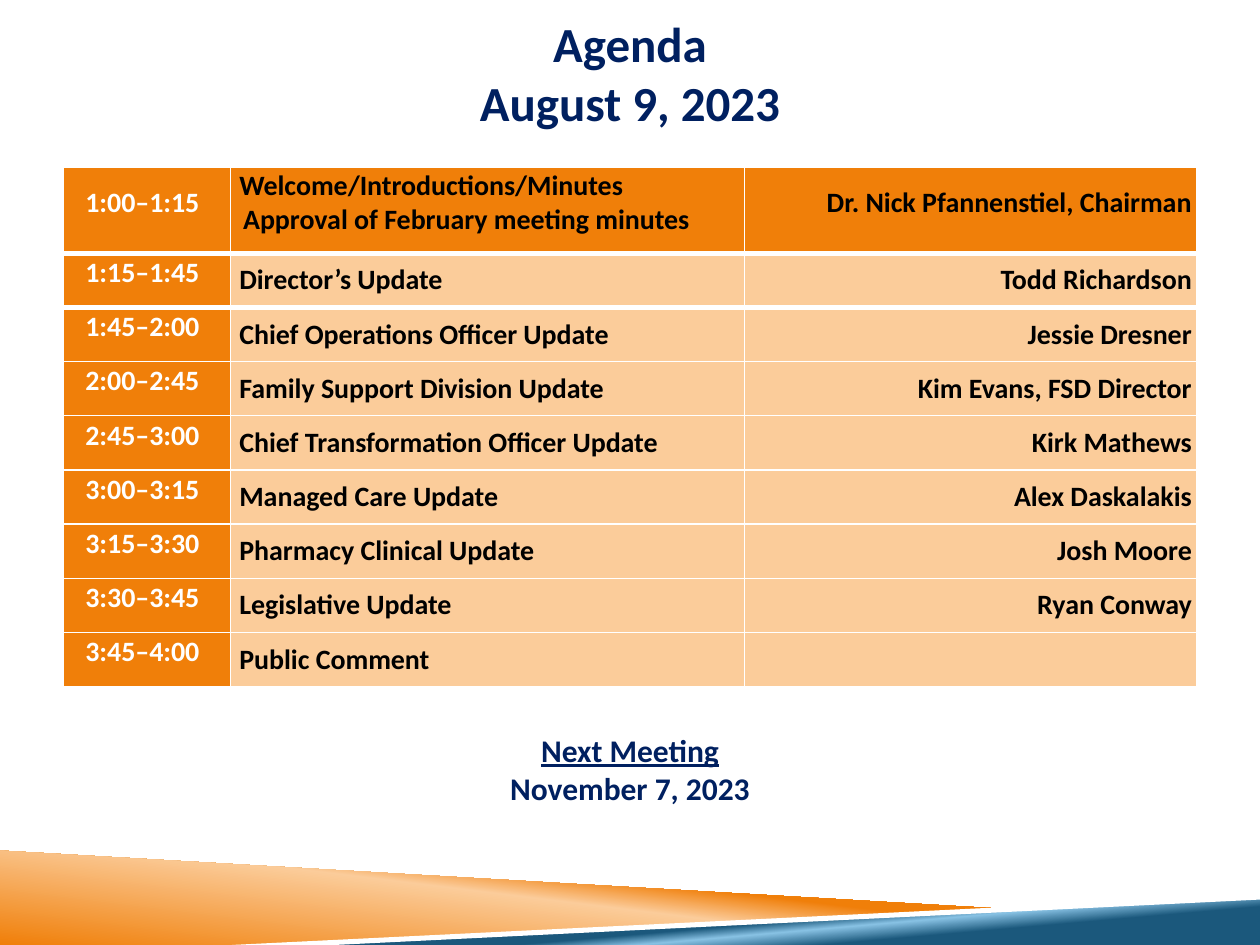
from lxml.etree import SubElement
from pptx import Presentation
from pptx.dml.color import RGBColor
from pptx.enum.text import MSO_ANCHOR, PP_ALIGN
from pptx.oxml.ns import qn
from pptx.util import Inches, Pt

COLORS = {
    "navy": "002060",
    "orange": "F07F09",
    "peach": "FBCC9A",
    "blue": "1B587C",
    "sky": "89C3E5",
    "white": "FFFFFF",
    "black": "000000",
}
AGENDA = [
    ("1:00–1:15", "Welcome/Introductions/Minutes\nApproval of February meeting minutes",
     "Dr. Nick Pfannenstiel, Chairman"),
    ("1:15–1:45", "Director’s Update", "Todd Richardson"),
    ("1:45–2:00", "Chief Operations Officer Update", "Jessie Dresner"),
    ("2:00–2:45", "Family Support Division Update", "Kim Evans, FSD Director"),
    ("2:45–3:00", "Chief Transformation Officer Update", "Kirk Mathews"),
    ("3:00–3:15", "Managed Care Update", "Alex Daskalakis"),
    ("3:15–3:30", "Pharmacy Clinical Update", "Josh Moore"),
    ("3:30–3:45", "Legislative Update", "Ryan Conway"),
    ("3:45–4:00", "Public Comment", ""),
]
SPARE_ROWS = 4


def style_text(paragraph, size, color, align):
    paragraph.alignment = align
    for run in paragraph.runs:
        run.font.name = "Calibri"
        run.font.size = Pt(size)
        run.font.bold = True
        run.font.color.rgb = RGBColor.from_string(COLORS[color])


def add_border(cell, side, width):
    """Draw a white border; call before filling the cell, as lines come first."""
    line = SubElement(cell._tc.get_or_add_tcPr(), qn(f"a:{side}"), w=str(Pt(width)))
    SubElement(SubElement(line, qn("a:solidFill")), qn("a:srgbClr"), val=COLORS["white"])


prs = Presentation()
prs.slide_width, prs.slide_height = Inches(10), Inches(7.5)
slide = prs.slides.add_slide(prs.slide_layouts[5])

# Footer wedges: outline, gradient stops (percent, color), clockwise angle
wedges = [
    ([(0, 6.75), (7.92, 7.21), (2, 7.5), (0, 7.5)],
     [(0, "orange"), (52, "peach"), (66, "orange")], 277),
    ([(1.98, 7.5), (10, 7.12), (10, 7.5)],
     [(28, "blue"), (40, "sky"), (48, "blue")], 265),
    ([(10, 7.1), (1.84, 7.5), (2.66, 7.5), (10, 7.14)], None, None),
]
for outline, stops, angle in wedges:
    points = [(Inches(x), Inches(y)) for x, y in outline]
    builder = slide.shapes.build_freeform(*points[0])
    builder.add_line_segments(points[1:], close=True)
    wedge = builder.convert_to_shape()
    wedge.shadow.inherit = False
    wedge.line.fill.background()
    if stops:
        wedge.fill.gradient()
        wedge.fill.gradient_angle = 360 - angle
        stop_list = wedge.element.spPr.find(qn("a:gradFill")).find(qn("a:gsLst"))
        stop_list.clear()
        for percent, color in stops:
            stop = SubElement(stop_list, qn("a:gs"), pos=str(percent * 1000))
            SubElement(stop, qn("a:srgbClr"), val=COLORS[color])
    else:
        wedge.fill.solid()
        wedge.fill.fore_color.rgb = RGBColor.from_string(COLORS["white"])

title = slide.shapes.title
title.left, title.top = Inches(0.69), Inches(0)
title.width, title.height = Inches(8.62), Inches(1.15)
title.text_frame.text = "Agenda\vAugust 9, 2023"
title.text_frame.vertical_anchor = MSO_ANCHOR.MIDDLE
style_text(title.text_frame.paragraphs[0], 28, "navy", PP_ALIGN.CENTER)

row_heights = [0.68] + [0.43] * (len(AGENDA) - 1) + [0.29] * SPARE_ROWS
schedule = slide.shapes.add_table(
    len(row_heights), 3, Inches(0.5), Inches(1.33), Inches(9), Inches(sum(row_heights))
).table
for column, width in zip(schedule.columns, (1.33, 4.08, 3.59)):
    column.width = Inches(width)
for row, height in zip(schedule.rows, row_heights):
    row.height = Inches(height)

# Per column: text color, alignment, left and right margin
columns = [
    ("white", PP_ALIGN.CENTER, 0, 0.07),
    ("black", PP_ALIGN.LEFT, 0.07, 0),
    ("black", PP_ALIGN.RIGHT, 0, 0.04),
]
for row, entry in enumerate(AGENDA + [("", "", "")] * SPARE_ROWS):
    for col, (color, align, left, right) in enumerate(columns):
        cell = schedule.cell(row, col)
        cell.text_frame.text = entry[col]
        cell.vertical_anchor = MSO_ANCHOR.MIDDLE
        cell.margin_left, cell.margin_right = Inches(left), Inches(right)
        cell.margin_top = cell.margin_bottom = 0
        if row == 0:
            add_border(cell, "lnB", 3)
        elif row == 1:
            add_border(cell, "lnT", 3)
        if row >= len(AGENDA):
            fill = "white"
        else:
            fill = "orange" if row == 0 or col == 0 else "peach"
        cell.fill.solid()
        cell.fill.fore_color.rgb = RGBColor.from_string(COLORS[fill])
        for paragraph in cell.text_frame.paragraphs:
            paragraph.font.size = Pt(16)
            style_text(paragraph, 16, color, align)
        if row == 0 or col == 0:
            cell.text_frame.paragraphs[0].line_spacing = Pt(11.2)
approval = schedule.cell(0, 1).text_frame.paragraphs[1]
approval._p.get_or_add_pPr().set("marL", str(Inches(0.03)))

next_meeting = slide.shapes.add_textbox(
    Inches(3.94), Inches(5.75), Inches(2.12), Inches(0.71)
).text_frame
next_meeting.word_wrap = False
next_meeting.text = "Next Meeting\nNovember 7, 2023"
for paragraph in next_meeting.paragraphs:
    style_text(paragraph, 18, "navy", PP_ALIGN.CENTER)
next_meeting.paragraphs[0].runs[0].font.underline = True

prs.save("out.pptx")
